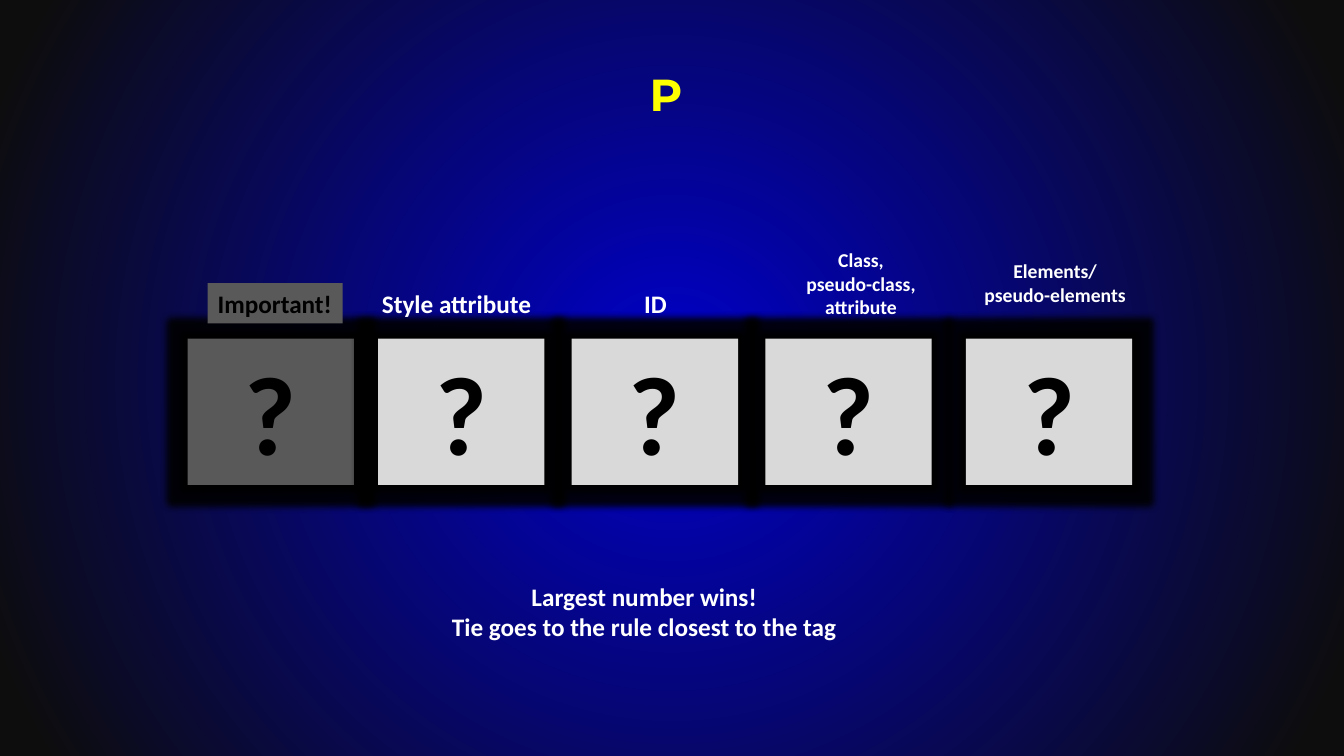
from lxml import etree
from pptx import Presentation
from pptx.dml.color import RGBColor
from pptx.enum.shapes import MSO_SHAPE
from pptx.enum.text import MSO_ANCHOR, MSO_AUTO_SIZE, PP_ALIGN
from pptx.oxml import parse_xml
from pptx.oxml.ns import qn
from pptx.util import Inches, Pt

RECTANGLE = MSO_SHAPE.RECTANGLE
CENTER, LEFT = PP_ALIGN.CENTER, PP_ALIGN.LEFT
MIDDLE, TOP = MSO_ANCHOR.MIDDLE, MSO_ANCHOR.TOP
FIT_SHAPE = MSO_AUTO_SIZE.SHAPE_TO_FIT_TEXT

SLIDE_W, SLIDE_H = 13.33, 7.5
DIMMED, LIGHT, BLACK, WHITE, YELLOW = "595959", "D9D9D9", "000000", "FFFFFF", "FFFF00"
CENTER_BLUE, EDGE_BLACK = "0000CC", "0D0D0D"
A_NS = "http://schemas.openxmlformats.org/drawingml/2006/main"

# Card row: left edge of each column, shared top and size
CARD_LEFTS = (1.86, 3.75, 5.67, 7.59, 9.58)
CARD_TOP, CARD_W, CARD_H = 3.36, 1.65, 1.45
GLOW_RADIUS = 0.14

# Column labels: text, box, size, alignment, wrap
LABELS = (
    ("Style attribute", (3.69, 2.81, 1.7, 0.4), 18, LEFT, False),
    ("ID", (6.29, 2.81, 0.43, 0.4), 18, LEFT, False),
    ("Class, pseudo-class, attribute", (7.88, 2.41, 1.32, 0.81), 14, CENTER, True),
    ("Elements/\npseudo-elements", (9.66, 2.52, 1.61, 0.57), 14, CENTER, False),
)


def color(hex_value):
    return RGBColor.from_string(hex_value)


def box(left, top, width, height):
    return [Inches(length) for length in (left, top, width, height)]


def write(frame, text, size, ink, align=CENTER, font="Calibri"):
    frame.text = text
    for paragraph in frame.paragraphs:
        paragraph.alignment = align
        paragraph.font.name = font
        paragraph.font.size = Pt(size)
        paragraph.font.bold = True
        paragraph.font.color.rgb = color(ink)


def add_panel(slide, area, fill, text, size, align, wrap):
    panel = slide.shapes.add_shape(RECTANGLE, *box(*area))
    panel.shadow.inherit = False
    panel.fill.solid()
    panel.fill.fore_color.rgb = color(fill)
    panel.line.fill.background()
    panel.text_frame.word_wrap = wrap
    panel.text_frame.auto_size = FIT_SHAPE
    panel.text_frame.vertical_anchor = TOP
    write(panel.text_frame, text, size, BLACK, align)
    return panel


def add_glow(panel):
    effects = panel.element.spPr.find(qn("a:effectLst"))
    glow = etree.SubElement(effects, qn("a:glow"), rad=str(Inches(GLOW_RADIUS)))
    tint = etree.SubElement(glow, qn("a:srgbClr"), val=BLACK)
    etree.SubElement(tint, qn("a:alpha"), val="90000")


def add_label(slide, text, area, size, align, wrap):
    frame = slide.shapes.add_textbox(*box(*area)).text_frame
    frame.word_wrap = wrap
    frame.auto_size = FIT_SHAPE
    write(frame, text, size, WHITE, align)


def paint_background(slide):
    slide.background.fill.solid()
    solid = slide.element.find(".//" + qn("p:bgPr")).find(qn("a:solidFill"))
    radial = parse_xml(
        f'<a:gradFill xmlns:a="{A_NS}" rotWithShape="1"><a:gsLst>'
        f'<a:gs pos="0"><a:srgbClr val="{CENTER_BLUE}"/></a:gs>'
        f'<a:gs pos="95000"><a:srgbClr val="{EDGE_BLACK}"/></a:gs></a:gsLst>'
        '<a:path path="circle"><a:fillToRect l="50000" t="50000" r="50000" b="50000"/>'
        "</a:path></a:gradFill>"
    )
    solid.getparent().replace(solid, radial)


def place_title(slide, text):
    title = slide.shapes.title
    title.left, title.top, title.width, title.height = box(0.67, 0.3, 12, 1.25)
    title.text_frame.vertical_anchor = MIDDLE
    write(title.text_frame, text, 32, YELLOW, font="Montserrat")


def main():
    deck = Presentation()
    deck.slide_width, deck.slide_height = Inches(SLIDE_W), Inches(SLIDE_H)
    slide = deck.slides.add_slide(deck.slide_layouts[5])
    paint_background(slide)
    place_title(slide, "P ")

    # Specificity cards, the first one dimmed
    for column, left in enumerate(CARD_LEFTS):
        fill = LIGHT if column else DIMMED
        area = (left, CARD_TOP, CARD_W, CARD_H)
        add_glow(add_panel(slide, area, fill, "?", 80, CENTER, True))

    # Column labels
    add_panel(slide, (2.06, 2.81, 1.34, 0.4), DIMMED, "Important!", 18, LEFT, False)
    for label in LABELS:
        add_label(slide, *label)

    # Rule for reading the numbers
    add_label(slide, "Largest number wins!\nTie goes to the rule closest to the tag",
              (4.37, 5.72, 4.04, 0.71), 18, CENTER, False)

    deck.save("out.pptx")


if __name__ == "__main__":
    main()
